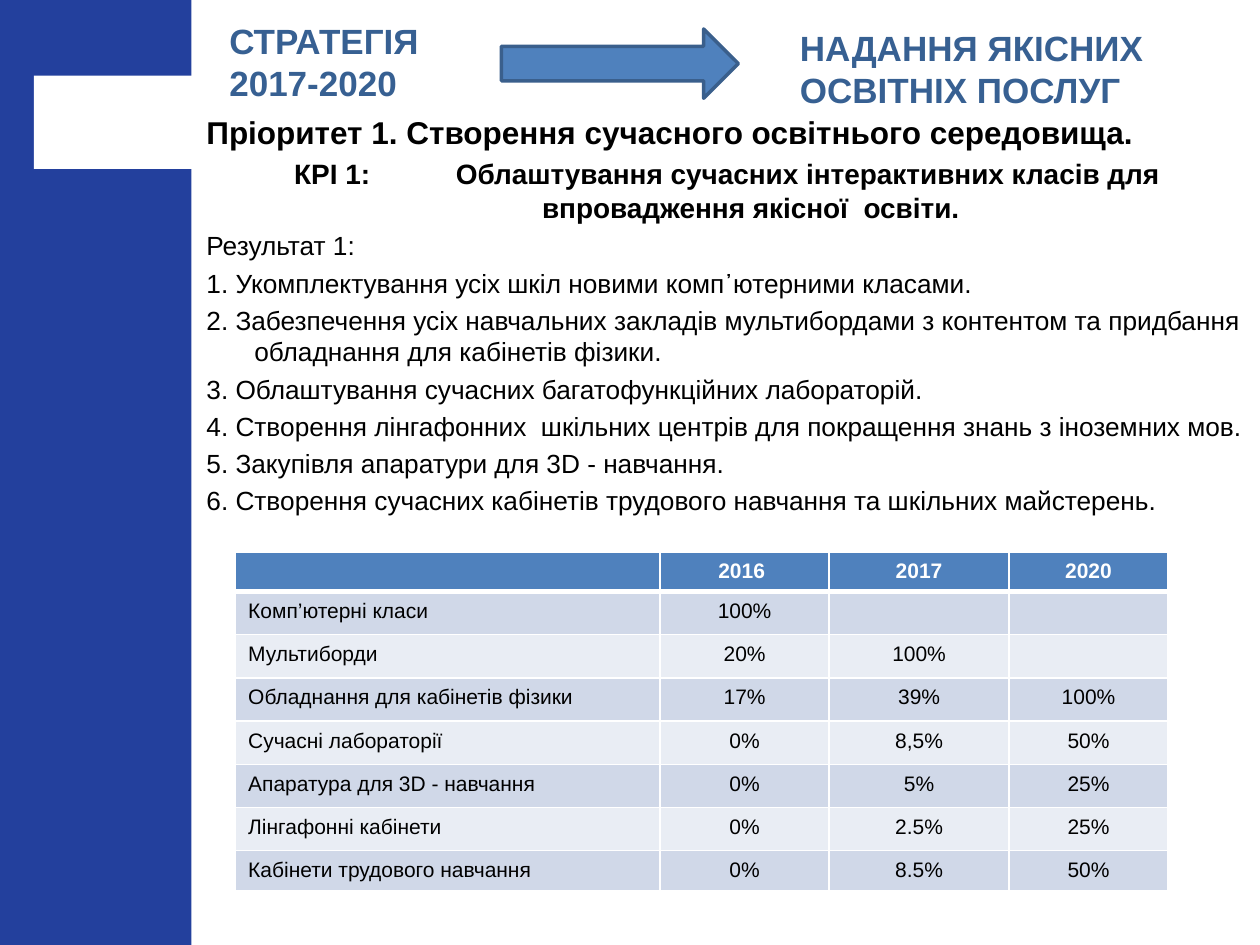
from lxml import etree
from pptx import Presentation
from pptx.dml.color import RGBColor
from pptx.enum.shapes import MSO_SHAPE
from pptx.enum.text import MSO_ANCHOR, MSO_AUTO_SIZE, PP_ALIGN
from pptx.oxml.ns import qn
from pptx.util import Inches, Pt

RECT, ARROW = MSO_SHAPE.RECTANGLE, MSO_SHAPE.RIGHT_ARROW
LEFT, MID = PP_ALIGN.LEFT, PP_ALIGN.CENTER
TOP, CENTRE = MSO_ANCHOR.TOP, MSO_ANCHOR.MIDDLE
FIXED = MSO_AUTO_SIZE.NONE

NAVY = RGBColor(0x23, 0x40, 0x9D)
WHITE = RGBColor(0xFF, 0xFF, 0xFF)
BLACK = RGBColor(0, 0, 0)
STEEL = RGBColor(0x37, 0x60, 0x92)
BLUE = RGBColor(0x4F, 0x81, 0xBD)
EDGE = RGBColor(0x3A, 0x5F, 0x8C)
DARK = RGBColor(0xD0, 0xD8, 0xE8)
PALE = RGBColor(0xE9, 0xED, 0xF4)

deck = Presentation()
deck.slide_width, deck.slide_height = Inches(10), Inches(7.5)
COL, ROW = deck.slide_width / 100, deck.slide_height / 75
slide = deck.slides.add_slide(deck.slide_layouts[5])
shapes = slide.shapes


def grid(x, y, w, h):
    return int(x * COL), int(y * ROW), int(w * COL), int(h * ROW)


def style(font, size, color, bold):
    look = {"name": "Arial", "size": Pt(size), "bold": bold}
    for key, value in look.items():
        setattr(font, key, value)
    font.color.rgb = color


for kind, area, fill, edge in [
    (RECT, (0, 0, 15.2, 75), NAVY, None),
    (RECT, (2.7, 6, 13.3, 7.4), WHITE, None),
    (ARROW, (39.8, 2.3, 18.8, 5.5), BLUE, EDGE),
]:
    shape = shapes.add_shape(kind, *grid(*area))
    shape.shadow.inherit = False
    shape.fill.solid()
    shape.fill.fore_color.rgb = fill
    if edge:
        shape.line.color.rgb = edge
        shape.line.width = Pt(2)
    else:
        shape.line.fill.background()

title = shapes.title
goal = shapes.add_textbox(0, 0, 0, 0)
for box, area, text, anchor in [
    (title, (17.2, 2.3, 20.3, 5.2), "СТРАТЕГІЯ \v2017-2020", CENTRE),
    (goal, (62.5, 1.6, 32.8, 7.7), "НАДАННЯ ЯКІСНИХ ОСВІТНІХ ПОСЛУГ", TOP),
]:
    box.left, box.top, box.width, box.height = grid(*area)
    frame = box.text_frame
    frame.text = text
    form = {"word_wrap": True, "auto_size": FIXED, "vertical_anchor": anchor}
    for key, value in form.items():
        setattr(frame, key, value)
    para = frame.paragraphs[0]
    para.alignment = LEFT
    for run in para.runs:
        style(run.font, 20, STEEL, True)

plan = [
    (["Пріоритет 1. Створення сучасного освітнього середовища."], 18, True, LEFT),
    (["КРІ 1:", " ", "Облаштування сучасних інтерактивних класів для "
      "впровадження якісної  освіти."], 16, True, MID),
]
plan += [([line], 15, False, LEFT) for line in [
    "Результат 1:",
    "1. Укомплектування усіх шкіл новими комп᾿ютерними класами.",
    "2. Забезпечення усіх навчальних закладів мультибордами з контентом "
    "та придбання обладнання для кабінетів фізики.",
    "3. Облаштування сучасних багатофункційних лабораторій.",
    "4. Створення лінгафонних  шкільних центрів для покращення знань "
    "з іноземних мов.",
    "5. Закупівля апаратури для 3D - навчання.",
    "6. Створення сучасних кабінетів трудового навчання та шкільних майстерень.",
]]
body = shapes.add_textbox(*grid(15.4, 8.5, 84.6, 33)).text_frame
body.word_wrap = True
for i, (parts, size, bold, align) in enumerate(plan):
    para = body.add_paragraph() if i else body.paragraphs[0]
    para.alignment = align
    if i:
        para.space_before = Pt(3.3)
    props = para._p.get_or_add_pPr()
    props.set("marL", str(Inches(0.38)))
    props.set("indent", str(Inches(-0.38)))
    for part in parts:
        run = para.add_run()
        run.text = part
        style(run.font, size, BLACK, bold)
        if part == " ":
            run.font._element.set("spc", "4450")

data = [
    ["", "2016 ", "2017", "2020"],
    ["Комп’ютерні класи", "100%", "", ""],
    ["Мультиборди", "20%", "100%", ""],
    ["Обладнання для кабінетів фізики", "17%", "39%", "100%"],
    ["Cучасні лабораторії", "0%", "8,5%", "50%"],
    ["Апаратура для 3D - навчання", "0%", "5%", "25%"],
    ["Лінгафонні кабінети", "0%", "2.5%", "25%"],
    ["Кабінети трудового навчання", "0%", "8.5%", "50%"],
]
wide = [33.7, 13.4, 14.3, 12.6]
high = [3.1] + [3.43] * 6 + [3.1]
area = grid(18.7, 43.8, sum(wide), sum(high))
table = shapes.add_table(len(high), len(wide), *area).table
for col, size in zip(table.columns, wide):
    col.width = int(size * COL)
for row, size in zip(table.rows, high):
    row.height = int(size * ROW)

for r, line in enumerate(data):
    for c, text in enumerate(line):
        cell = table.cell(r, c)
        cell.margin_top = cell.margin_bottom = Inches(0.05)
        para = cell.text_frame.paragraphs[0]
        para.alignment = MID if c else LEFT
        para.line_spacing = 1.07
        if text:
            run = para.add_run()
            run.text = text
            style(run.font, 12, BLACK if r else WHITE, r == 0)
        else:
            etree.SubElement(para._p, qn("a:endParaRPr"), sz="1200")
        props = cell._tc.get_or_add_tcPr()
        for side in ("lnL", "lnR", "lnT", "lnB"):
            thick = (r, side) in [(0, "lnB"), (1, "lnT")]
            rule = etree.SubElement(props, qn("a:" + side), w=str(Pt(3 if thick else 1)))
            paint = etree.SubElement(rule, qn("a:solidFill"))
            etree.SubElement(paint, qn("a:srgbClr"), val=str(WHITE))
        cell.fill.solid()
        cell.fill.fore_color.rgb = (DARK if r % 2 else PALE) if r else BLUE

deck.save("out.pptx")
